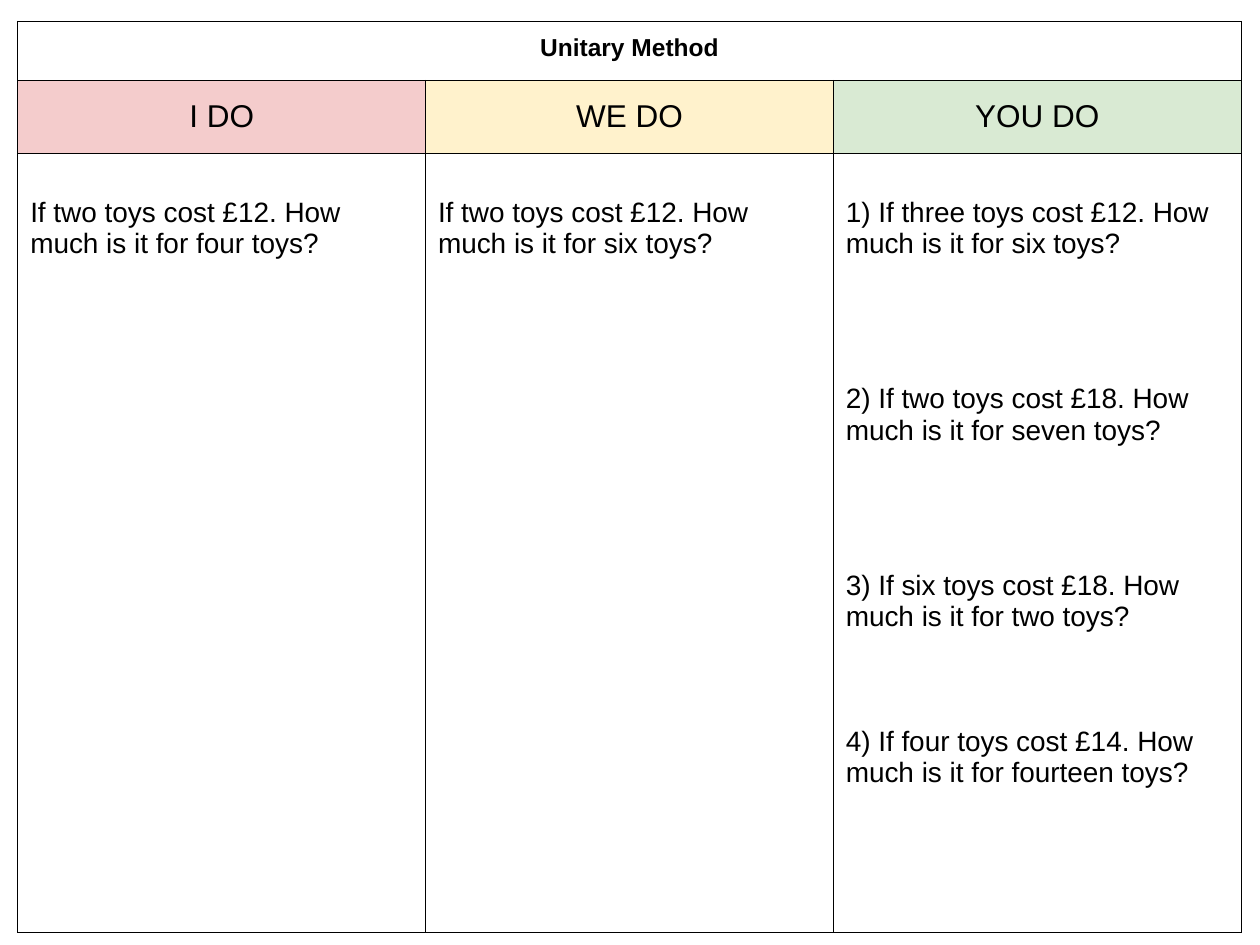
"""Build a one-slide worksheet table on the unitary method."""
import lxml.etree
import pptx
import pptx.dml.color
import pptx.enum.text
import pptx.oxml.ns
import pptx.util

Cm = pptx.util.Cm
Pt = pptx.util.Pt
ALIGN = pptx.enum.text.PP_ALIGN
ANCHOR = pptx.enum.text.MSO_ANCHOR

COLORS = {"ink": "000000", "pink": "F4CCCC", "yellow": "FFF2CC", "green": "D9EAD3"}
TITLE = "Unitary Method"
LINE_PITCH = 17.8
COLUMNS = [
    ("I DO", "pink", [(0, "If two toys cost £12. How much is it for four toys?")]),
    ("WE DO", "yellow", [(0, "If two toys cost £12. How much is it for six toys?")]),
    ("YOU DO", "green", [
        (0, "1) If three toys cost £12. How much is it for six toys?"),
        (4, "2) If two toys cost £18. How much is it for seven toys?"),
        (4, "3) If six toys cost £18. How much is it for two toys?"),
        (3, "4) If four toys cost £14. How much is it for fourteen toys?"),
    ]),
]
LEFT, TOP = 0.36, 0.43
COLUMN_WIDTH = 8.22
ROW_HEIGHTS = [1.19, 1.47, 15.7]
MARGIN = 0.25
QUESTION_TOP = 0.88


def write(paragraph, text, *, size, bold=False, align=ALIGN.LEFT, gap_lines=0):
    paragraph.alignment = align
    paragraph.space_before = Pt(round(gap_lines * LINE_PITCH, 1))
    run = paragraph.add_run()
    run.text = text
    run.font.name = "Arial"
    run.font.size = Pt(size)
    run.font.bold = bold
    run.font.color.rgb = pptx.dml.color.RGBColor.from_string(COLORS["ink"])


def add_borders(cell):
    qn = pptx.oxml.ns.qn
    properties = cell._tc.get_or_add_tcPr()
    for side in ("lnL", "lnR", "lnT", "lnB"):
        line = lxml.etree.SubElement(properties, qn(f"a:{side}"), w=str(Pt(0.75)))
        fill = lxml.etree.SubElement(line, qn("a:solidFill"))
        lxml.etree.SubElement(fill, qn("a:srgbClr"), val=COLORS["ink"])


def format_cell(cell):
    cell.margin_left = cell.margin_right = Cm(MARGIN)
    cell.margin_top = cell.margin_bottom = Cm(MARGIN)
    add_borders(cell)
    cell.fill.background()


def add_worksheet(slide):
    frame = slide.shapes.add_table(
        len(ROW_HEIGHTS), len(COLUMNS), Cm(LEFT), Cm(TOP),
        Cm(COLUMN_WIDTH * len(COLUMNS)), Cm(sum(ROW_HEIGHTS)))
    table = frame.table
    table.first_row = table.horz_banding = False
    for row, height in zip(table.rows, ROW_HEIGHTS):
        row.height = Cm(height)
    for column in table.columns:
        column.width = Cm(COLUMN_WIDTH)
    for cell in table.iter_cells():
        format_cell(cell)

    title = table.cell(0, 0)
    title.merge(table.cell(0, len(COLUMNS) - 1))
    write(title.text_frame.paragraphs[0], TITLE, size=14, bold=True, align=ALIGN.CENTER)

    for index, (heading, color, questions) in enumerate(COLUMNS):
        header = table.cell(1, index)
        header.vertical_anchor = ANCHOR.MIDDLE
        header.fill.solid()
        header.fill.fore_color.rgb = pptx.dml.color.RGBColor.from_string(COLORS[color])
        write(header.text_frame.paragraphs[0], heading, size=18, align=ALIGN.CENTER)

        body = table.cell(2, index)
        body.margin_top = Cm(QUESTION_TOP)
        for number, (gap_lines, question) in enumerate(questions):
            text_frame = body.text_frame
            paragraph = text_frame.add_paragraph() if number else text_frame.paragraphs[0]
            write(paragraph, question, size=16, gap_lines=gap_lines)


def main():
    presentation = pptx.Presentation()
    presentation.slide_width = Cm(25.4)
    presentation.slide_height = Cm(19.05)
    slide = presentation.slides.add_slide(presentation.slide_layouts[6])
    add_worksheet(slide)
    presentation.save("out.pptx")


if __name__ == "__main__":
    main()
